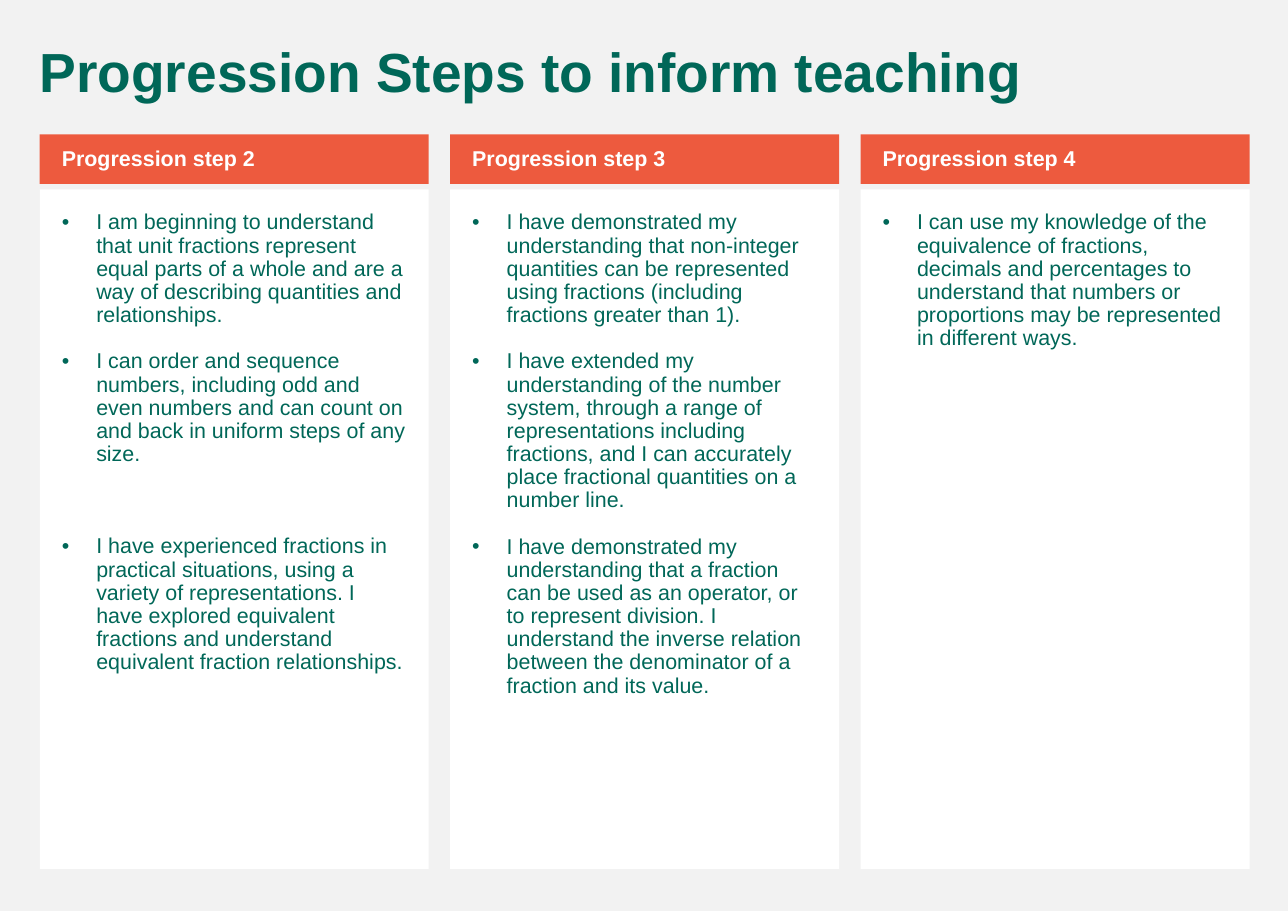
from lxml import etree
from pptx import Presentation
from pptx.dml.color import RGBColor
from pptx.enum.shapes import MSO_SHAPE
from pptx.enum.text import MSO_ANCHOR, MSO_AUTO_SIZE, PP_ALIGN
from pptx.oxml.ns import qn
from pptx.util import Pt

RECT = MSO_SHAPE.RECTANGLE
TOP, MIDDLE = MSO_ANCHOR.TOP, MSO_ANCHOR.MIDDLE
LEFT = PP_ALIGN.LEFT
NO_FIT = MSO_AUTO_SIZE.NONE

COLORS = {"page": "F2F2F2", "panel": "FFFFFF", "header": "ED5A3E",
          "text": "006758", "header_text": "FFFFFF"}
FONTS = {
    "title": {"name": "Arial", "size": Pt(36), "bold": True},
    "header": {"name": "Arial", "size": Pt(14), "bold": True},
    "list": {"name": "Arial", "size": Pt(14), "bold": False},
}
FRAMES = {
    "title": {"vertical_anchor": TOP, "margin_left": Pt(7.2), "margin_right": Pt(7.2),
              "margin_top": Pt(3.6), "margin_bottom": Pt(3.6)},
    "header": {"vertical_anchor": MIDDLE, "margin_left": Pt(14.4), "margin_right": Pt(7.2),
               "margin_top": Pt(3.6), "margin_bottom": Pt(3.6)},
    "list": {"vertical_anchor": TOP, "margin_left": Pt(14.4), "margin_right": Pt(14.4),
             "margin_top": Pt(14.4), "margin_bottom": Pt(14.4)},
}
HEADER_H, HEADER_GAP = 32.4, 3.6
COL_LEFT, COL_TOP, COL_W, COL_H, COL_PITCH = 26, 87.8, 254.2, 480.2, 268.2
LINE = 15.1
INDENT = 22.5

STEPS = [
    ("Progression step 2", [
        (0, "I am beginning to understand that unit fractions represent equal parts of a "
            "whole and are a way of describing quantities and relationships."),
        (1, "I can order and sequence numbers, including odd and even numbers and can "
            "count on and back in uniform steps of any size."),
        (3, "I have experienced fractions in practical situations, using a variety of "
            "representations. I have explored equivalent fractions and understand "
            "equivalent fraction relationships."),
    ]),
    ("Progression step 3", [
        (0, "I have demonstrated my understanding that non-integer quantities can be "
            "represented using fractions (including fractions greater than 1)."),
        (1, "I have extended my understanding of the number system, through a range of "
            "representations including fractions, and I can accurately place fractional "
            "quantities on a number line."),
        (1, "I have demonstrated my understanding that a fraction can be used as an "
            "operator, or to represent division. I understand the inverse relation "
            "between the denominator of a fraction and its value."),
    ]),
    ("Progression step 4", [
        (0, "I can use my knowledge of the equivalence of fractions, decimals and "
            "percentages to understand that numbers or proportions may be represented "
            "in different ways."),
    ]),
]


def set_attrs(obj, values):
    """Set each named attribute of an object."""
    for name, value in values.items():
        setattr(obj, name, value)


def place(sp, x, y, w, h):
    """Move and size a shape in points."""
    set_attrs(sp, {"left": Pt(x), "top": Pt(y), "width": Pt(w), "height": Pt(h)})


def fill_shape(sp, color):
    """Give a shape a plain fill without an outline."""
    sp.fill.solid()
    sp.fill.fore_color.rgb = RGBColor.from_string(COLORS[color])
    sp.line.fill.background()


def format_frame(tf, kind):
    """Apply the margins and anchor of one kind of text."""
    set_attrs(tf, {"word_wrap": True, "auto_size": NO_FIT, **FRAMES[kind]})


def write(p, text, kind, color, before=0):
    """Write one formatted paragraph."""
    set_attrs(p, {"alignment": LEFT, "line_spacing": 0.9,
                  "space_before": Pt(before), "space_after": Pt(0)})
    r = p.add_run()
    r.text = text
    set_attrs(r.font, FONTS[kind])
    r.font.color.rgb = RGBColor.from_string(COLORS[color])


def add_bullet(p):
    """Give a paragraph a hanging round bullet."""
    pPr = p._p.get_or_add_pPr()
    pPr.set("marL", str(Pt(INDENT)))
    pPr.set("indent", str(-Pt(INDENT)))
    etree.SubElement(pPr, qn("a:buFont")).set("typeface", "Arial")
    etree.SubElement(pPr, qn("a:buChar")).set("char", "•")


def draw_title(sp, text, x, y, w, h):
    """Fill the title placeholder in its box."""
    place(sp, x, y, w, h)
    format_frame(sp.text_frame, "title")
    write(sp.text_frame.paragraphs[0], text, "title", "text")


def draw_header(s, text, x, y, w, h):
    """Draw the coloured heading bar of a column."""
    sp = s.shapes.add_shape(RECT, Pt(x), Pt(y), Pt(w), Pt(h))
    sp.shadow.inherit = False
    fill_shape(sp, "header")
    format_frame(sp.text_frame, "header")
    write(sp.text_frame.paragraphs[0], text, "header", "header_text")


def draw_list(sp, items, x, y, w, h):
    """Fill a body placeholder with bulleted statements."""
    place(sp, x, y, w, h)
    fill_shape(sp, "panel")
    tf = sp.text_frame
    format_frame(tf, "list")
    for i, (gap, text) in enumerate(items):
        p = tf.add_paragraph() if i else tf.paragraphs[0]
        write(p, text, "list", "text", gap * LINE)
        add_bullet(p)


def draw_column(s, sp, step, x, y, w, h):
    """Draw a heading bar and its list inside the column box."""
    header, items = step
    offset = HEADER_H + HEADER_GAP
    draw_header(s, header, x, y, w, HEADER_H)
    draw_list(sp, items, x, y + offset, w, h - offset)


def main():
    """Build and save the slide."""
    prs = Presentation()
    set_attrs(prs, {"slide_width": Pt(841.68), "slide_height": Pt(595.44)})
    s = prs.slides.add_slide(prs.slide_layouts.get_by_name("Comparison"))
    s.background.fill.solid()
    s.background.fill.fore_color.rgb = RGBColor.from_string(COLORS["page"])
    title, *bodies, spare = s.placeholders
    spare.element.getparent().remove(spare.element)
    draw_title(title, "Progression Steps to inform teaching", 18.7, 25.9, 797.8, 46.8)
    for i, (sp, step) in enumerate(zip(bodies, STEPS)):
        draw_column(s, sp, step, COL_LEFT + i * COL_PITCH, COL_TOP, COL_W, COL_H)
    prs.save("out.pptx")


if __name__ == "__main__":
    main()
